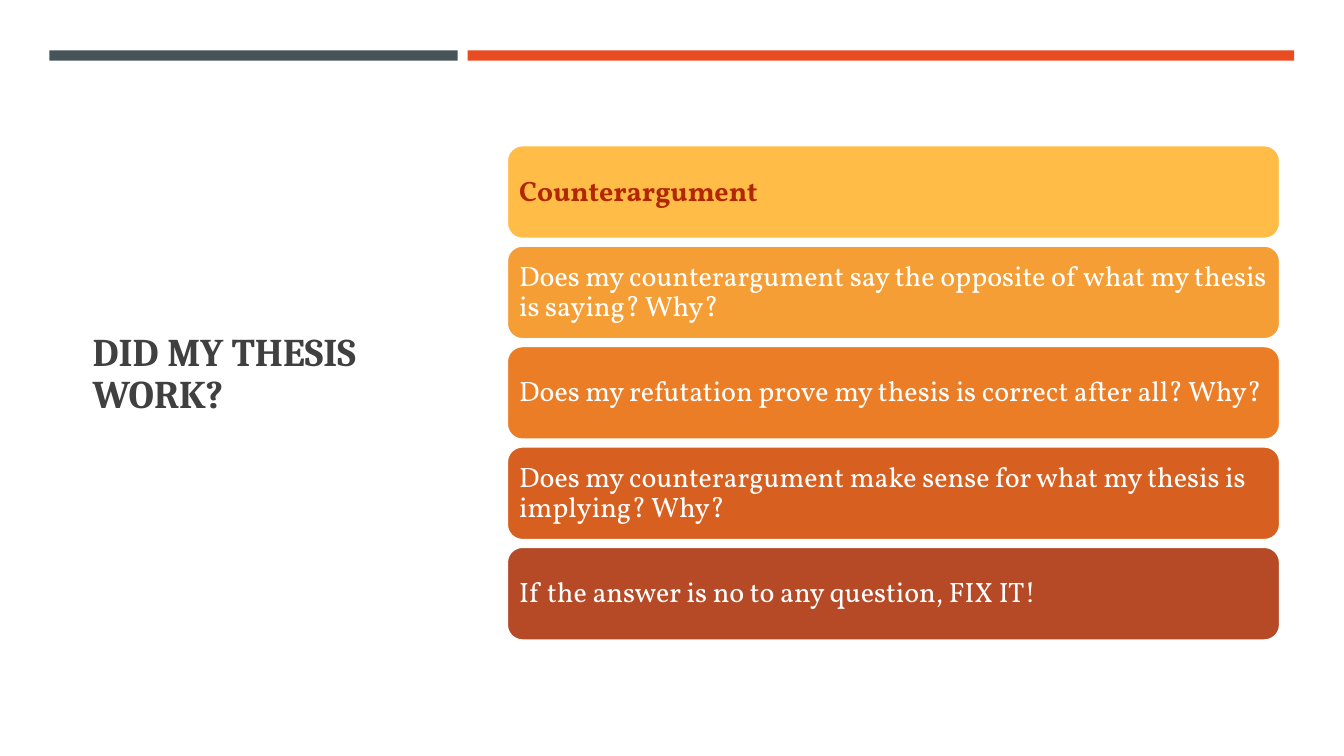
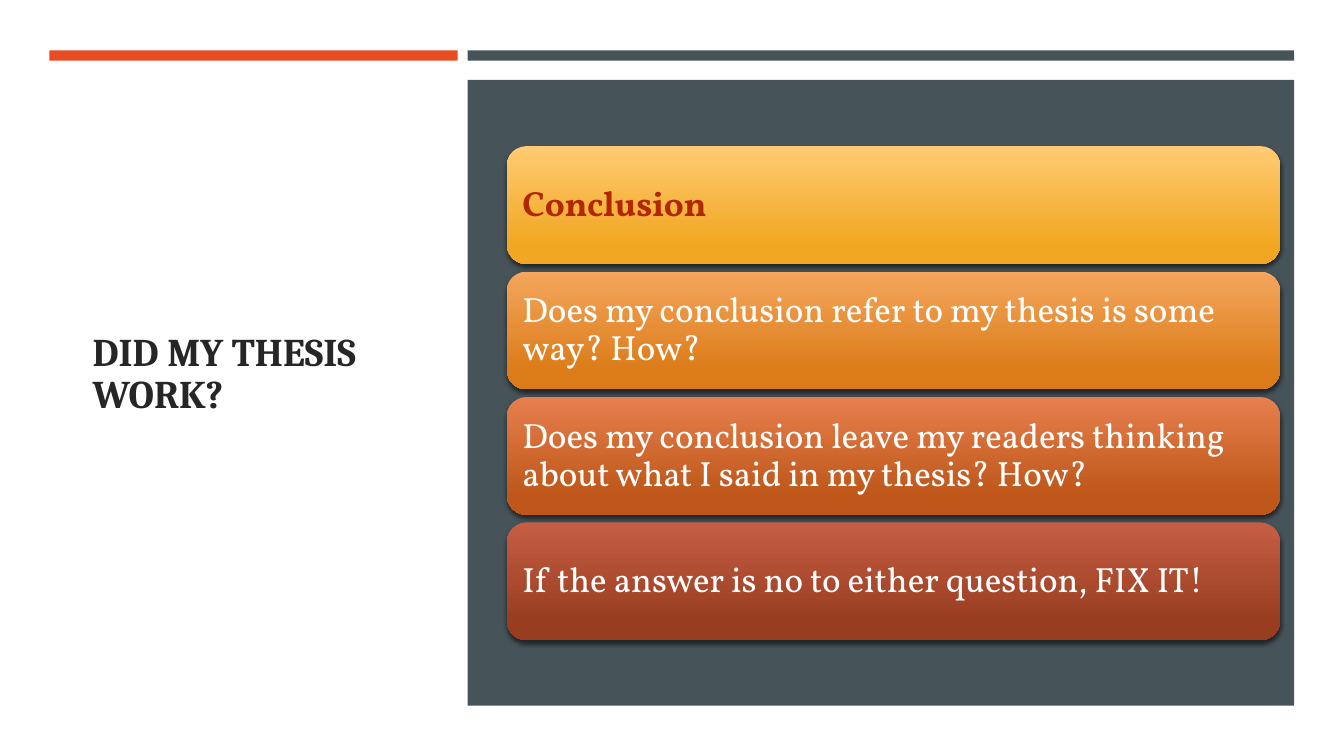
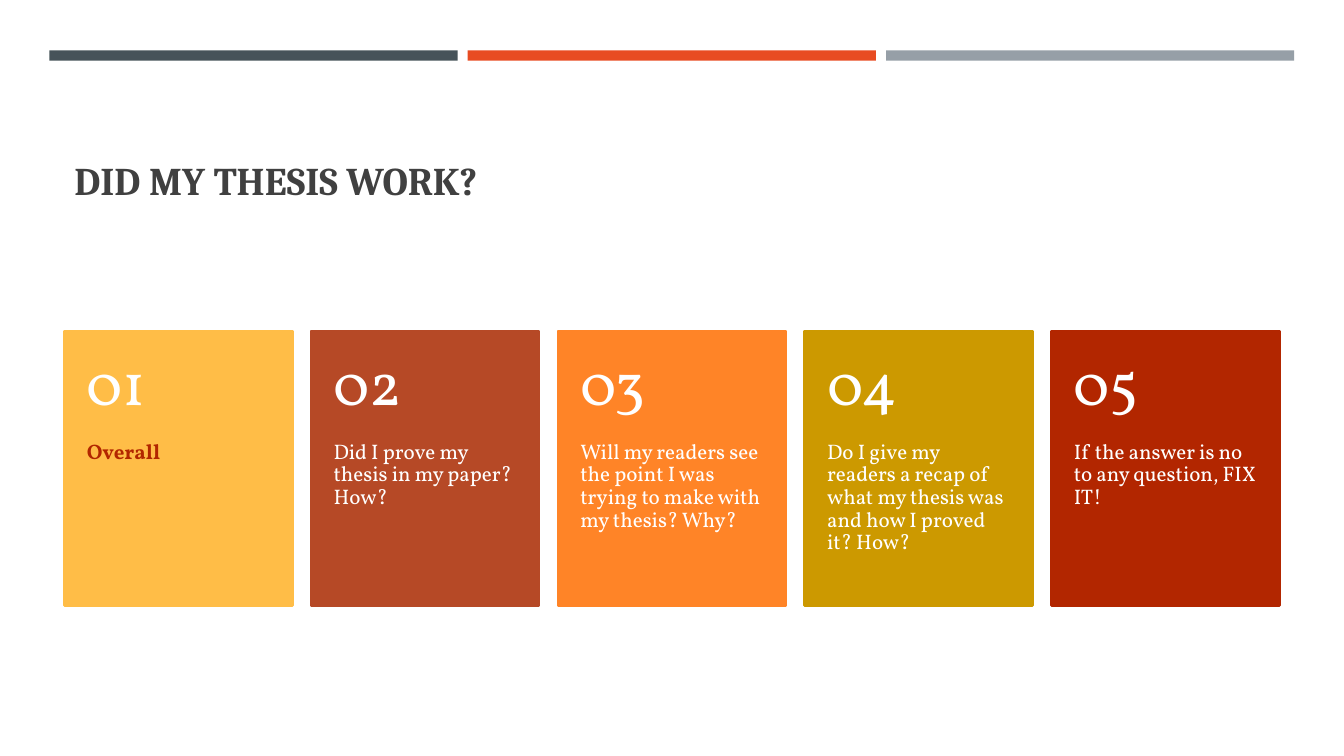
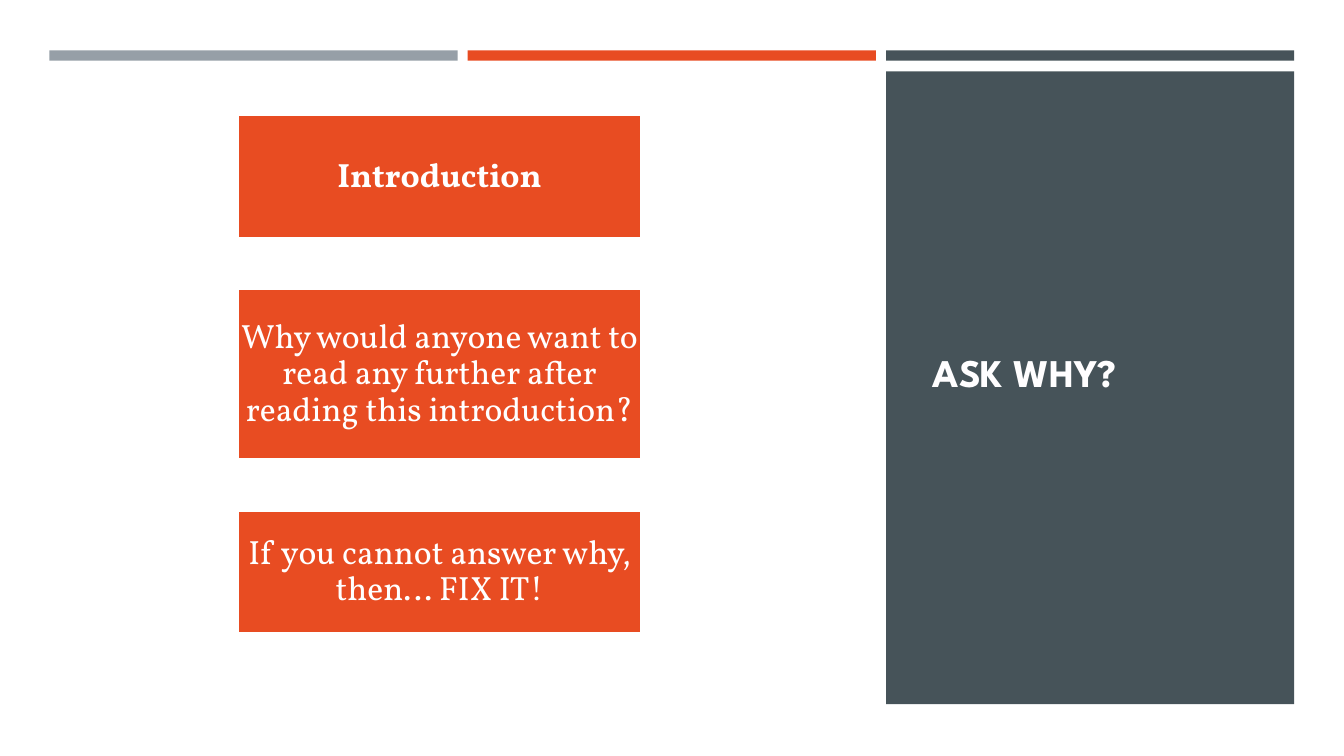
from lxml.etree import SubElement
from pptx import Presentation
from pptx.dml.color import RGBColor
from pptx.enum.shapes import MSO_SHAPE
from pptx.enum.text import MSO_ANCHOR, MSO_AUTO_SIZE, PP_ALIGN
from pptx.oxml.ns import qn
from pptx.util import Pt

# Shared colours and fonts
WHITE, SLATE, ORANGE, GREY = "FFFFFF", "465359", "E84C22", "969FA7"
CHARCOAL, INK, RED = "404040", "262626", "B22600"
BODY_FONT, SERIF, SANS = "Vollkorn", "Cambria", "League Spartan"

# Three-column grid behind the bands and panels
LEFT, COLUMN, GUTTER = 35.3, 291.6, 7.2
SIDE_TITLE = (59, 82, 240.5, 371)


def rgb(value):
    return RGBColor.from_string(value)


def column_box(first, span, top, height):
    """Box that covers a number of grid columns."""
    width = span * COLUMN + (span - 1) * GUTTER
    return LEFT + first * (COLUMN + GUTTER), top, width, height


def set_text(shape, text, size, color, bold=False, font=BODY_FONT,
             align=PP_ALIGN.LEFT, anchor=MSO_ANCHOR.MIDDLE,
             insets=(7.2, 3.6, 7.2, 3.6)):
    tf = shape.text_frame
    sides = ("margin_left", "margin_top", "margin_right", "margin_bottom")
    frame = {"word_wrap": True, "auto_size": MSO_AUTO_SIZE.NONE,
             "vertical_anchor": anchor}
    frame.update(zip(sides, map(Pt, insets)))
    for name, value in frame.items():
        setattr(tf, name, value)
    p = tf.paragraphs[0]
    p.alignment, p.line_spacing = align, 0.9
    r = p.add_run()
    r.text = text
    for name, value in {"name": font, "size": Pt(size), "bold": bold}.items():
        setattr(r.font, name, value)
    r.font.color.rgb = rgb(color)


def add_box(s, box, fill, line=None, line_width=1.75, kind=MSO_SHAPE.RECTANGLE):
    """Preset shape; a pair of colours as fill makes a vertical gradient."""
    sp = s.shapes.add_shape(kind, *map(Pt, box))
    if isinstance(fill, tuple):
        sp.fill.gradient()
        sp.fill.gradient_angle = 270
        for stop, position, color in zip(sp.fill.gradient_stops, (0, 0.84), fill):
            stop.position = position
            stop.color.rgb = rgb(color)
    else:
        sp.fill.solid()
        sp.fill.fore_color.rgb = rgb(fill)
    if line:
        sp.line.color.rgb = rgb(line)
        sp.line.width = Pt(line_width)
    else:
        sp.line.fill.background()
    sp.shadow.inherit = False
    return sp


def add_shadow(sp):
    effects = sp.element.spPr.find(qn("a:effectLst"))
    shadow = SubElement(effects, qn("a:outerShdw"), blurRad=str(Pt(3)),
                        dist=str(Pt(2)), dir="5400000", rotWithShape="0")
    color = SubElement(shadow, qn("a:srgbClr"), val="000000")
    SubElement(color, qn("a:alpha"), val="55000")


def add_bands(s, *bands):
    """Top bands, each given as (colour, columns covered)."""
    first = 0
    for color, span in bands:
        add_box(s, column_box(first, span, 36, 7.4), color)
        first += span


def add_title(s, box, text, color, font=SERIF, anchor=MSO_ANCHOR.MIDDLE):
    title = s.shapes.title
    title.left, title.top, title.width, title.height = map(Pt, box)
    set_text(title, text, 28, color, True, font, anchor=anchor)
    s.shapes.element.append(title.element)  # in front of any panel


def add_rows(s, box, rows, gap, size, inset, line=None, shadow=False):
    """Equal rounded rows; the first one is the heading."""
    x, y, w, h = box
    row_h = (h - gap * (len(rows) - 1)) / len(rows)
    for i, (text, fill) in enumerate(rows):
        sp = add_box(s, (x, y + i * (row_h + gap), w, row_h), fill, line,
                     kind=MSO_SHAPE.ROUNDED_RECTANGLE)
        if shadow:
            add_shadow(sp)
        heading = i == 0
        set_text(sp, text, size, RED if heading else WHITE, heading,
                 insets=(inset,) * 4)


def add_cards(s, box, cards, gap):
    """Equal numbered cards; the first one is the heading."""
    x, y, w, h = box
    card_w = (w - gap * (len(cards) - 1)) / len(cards)
    number_h = 0.4 * h
    for i, (text, fill) in enumerate(cards):
        card_x = x + i * (card_w + gap)
        heading = i == 0
        card = add_box(s, (card_x, y, card_w, h), fill, fill)
        set_text(card, text, 15, RED if heading else WHITE, heading,
                 anchor=MSO_ANCHOR.TOP, insets=(16, number_h, 16, 26))
        number = s.shapes.add_textbox(*map(Pt, (card_x, y, card_w, number_h)))
        set_text(number, f"{i + 1:02}", 43, WHITE, insets=(16, 13, 16, 13))


def add_steps(s, box, steps, gap):
    """Centred blocks, each given as (text, height); the first is the heading."""
    x, y, w = box
    for i, (text, height) in enumerate(steps):
        sp = add_box(s, (x, y, w, height), ORANGE, WHITE, 2)
        set_text(sp, text, 24, WHITE, i == 0, align=PP_ALIGN.CENTER,
                 insets=(1.4,) * 4)
        y += height + gap


def counterargument_slide(s):
    add_bands(s, (SLATE, 1), (ORANGE, 2))
    add_title(s, SIDE_TITLE, "DID MY THESIS WORK?", CHARCOAL)
    add_rows(s, (362, 103.7, 552.4, 353.8), [
        ("Counterargument", "FFBD47"),
        ("Does my counterargument say the opposite of what my thesis is saying? Why?",
         "F69E36"),
        ("Does my refutation prove my thesis is correct after all? Why?", "EB7D26"),
        ("Does my counterargument make sense for what my thesis is implying? Why?",
         "D75F20"),
        ("If the answer is no to any question, FIX IT!", "B64926"),
    ], gap=4.8, size=20, inset=5.6, line=WHITE)


def conclusion_slide(s):
    add_bands(s, (ORANGE, 1), (SLATE, 2))
    add_box(s, column_box(1, 2, 57, 447), SLATE)
    add_title(s, SIDE_TITLE, "DID MY THESIS WORK?", INK)
    add_rows(s, (362, 104.4, 552.4, 353), [
        ("Conclusion", ("FFCB73", "F1A721")),
        ("Does my conclusion refer to my thesis is some way? How?",
         ("F4A65D", "DC7C19")),
        ("Does my conclusion leave my readers thinking about what I said in my "
         "thesis? How?", ("E67F4D", "BE5719")),
        ("If the answer is no to either question, FIX IT!", ("C55E44", "993D20")),
    ], gap=5.4, size=25, inset=7.2, shadow=True)


def overall_slide(s):
    add_bands(s, (SLATE, 1), (ORANGE, 1), (GREY, 1))
    add_title(s, (46, 55.4, 868, 93.6), "DID MY THESIS WORK?", CHARCOAL,
              anchor=MSO_ANCHOR.BOTTOM)
    add_cards(s, (46, 236.6, 868, 196), [
        ("Overall", "FFBD47"),
        ("Did I prove my thesis in my paper? How?", "B64926"),
        ("Will my readers see the point I was trying to make with my thesis? Why?",
         "FF8427"),
        ("Do I give my readers a recap of what my thesis was and how I proved it? "
         "How?", "CC9900"),
        ("If the answer is no to any question, FIX IT!", RED),
    ], gap=13.4)


def introduction_slide(s):
    add_bands(s, (GREY, 1), (ORANGE, 1), (SLATE, 1))
    add_box(s, column_box(2, 1, 51, 452), SLATE)
    add_title(s, (659, 82, 237, 371), "ASK WHY?", "FFFEFF", SANS)
    add_steps(s, (170, 82, 288), [
        ("Introduction", 88),
        ("Why would anyone want to read any further after reading this introduction?",
         122.4),
        ("If you cannot answer why, then… FIX IT!", 88),
    ], gap=36)


def main():
    prs = Presentation()
    prs.slide_width, prs.slide_height = Pt(960), Pt(540)
    title_only = prs.slide_layouts[5]
    for build in (counterargument_slide, conclusion_slide, overall_slide,
                  introduction_slide):
        build(prs.slides.add_slide(title_only))
    prs.save("out.pptx")


if __name__ == "__main__":
    main()
